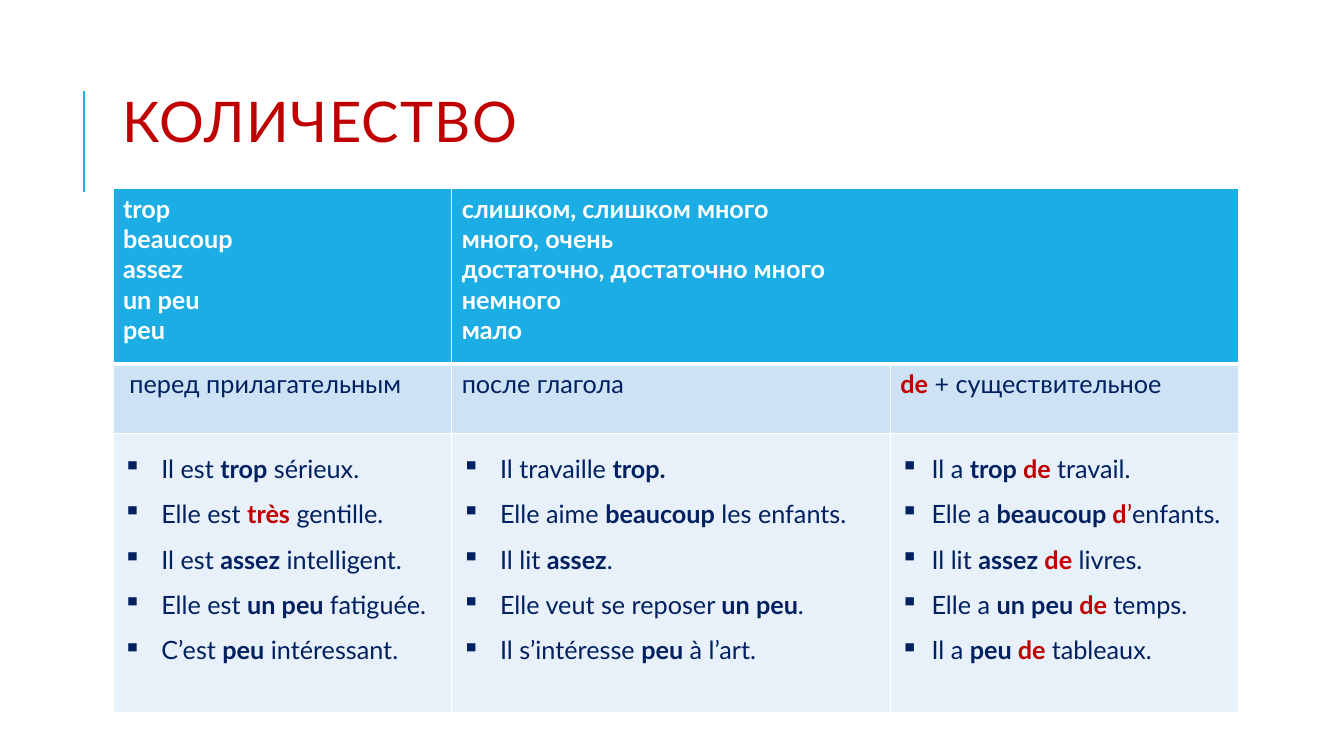
import pptx
import pptx.dml.color
import pptx.enum.shapes
import pptx.enum.text
import pptx.oxml
import pptx.oxml.ns
import pptx.util
from dataclasses import dataclass
from lxml import etree

Inches = pptx.util.Inches
Pt = pptx.util.Pt
qn = pptx.oxml.ns.qn


@dataclass(frozen=True)
class Theme:
    font: str = "Lato"
    title_size: int = 40
    body_size: int = 18
    accent: str = "1CADE4"
    red: str = "C00000"
    navy: str = "002060"
    white: str = "FFFFFF"
    usage_fill: str = "CDE3F5"
    examples_fill: str = "E8F1FA"


THEME = Theme()

# Runs are separated by "|"; a first sign sets the style:
# "*" bold, "!" bold red, "~" red
MARKS = {"*": (True, None), "!": (True, THEME.red), "~": (False, THEME.red)}

ADVERBS = ["trop", "beaucoup", "assez", "un peu", "peu"]
TRANSLATIONS = ["слишком, слишком много", "много, очень",
                "достаточно, достаточно много", "немного", "малo"]
USAGES = [" перед прилагательным", "после глагола", "!de| + существительное"]
EXAMPLES = [
    ["Il est |*trop| sérieux.", "Elle est |!très| gentille.",
     "Il est |*assez| intelligent.", "Elle est |*un peu |fatiguée.",
     "C’est |*peu| intéressant."],
    ["Il travaille |*trop.", "Elle aime |*beaucoup| les enfants.",
     "Il lit |*assez|.", "Elle veut se reposer |*un peu|.",
     "Il s’intéresse |*peu| à l’art."],
    ["Il a |*trop |!de |travail.", "Elle a |*beaucoup |!d|~’|enfants.",
     "Il lit |*assez |!de| livres.", "Elle a |*un peu |!de |temps.",
     "Il a |*peu |!de |tableaux."],
]
COLUMN_WIDTHS = [3.36, 4.35, 3.46]
ROW_HEIGHTS = [1.74, 0.69, 2.77]
EXAMPLE_INDENTS = [0.38, 0.38, 0.31]


def rgb(colour):
    return pptx.dml.color.RGBColor.from_string(colour)


def add_run(paragraph, text, size, colour, bold=False):
    run = paragraph.add_run()
    run.text = text
    run.font.name = THEME.font
    run.font.size = Pt(size)
    run.font.bold = bold
    run.font.color.rgb = rgb(colour)
    return run


def add_bullet(paragraph, indent):
    paragraph.line_spacing = 1.5
    properties = paragraph._p.get_or_add_pPr()
    properties.set("marL", str(Inches(indent)))
    properties.set("indent", str(-Inches(indent)))
    etree.SubElement(properties, qn("a:buChar")).set("char", "▪")


def set_borders(cell, top, bottom):
    properties = cell._tc.get_or_add_tcPr()
    sides = {"a:lnL": 1, "a:lnR": 1, "a:lnT": top, "a:lnB": bottom}
    for place, (tag, width) in enumerate(sides.items()):
        border = etree.Element(qn(tag), w=str(Pt(width)))
        fill = etree.SubElement(border, qn("a:solidFill"))
        etree.SubElement(fill, qn("a:srgbClr")).set("val", THEME.white)
        properties.insert(place, border)


def fill_cell(cell, lines, colour, bold=False, indent=None):
    for number, line in enumerate(lines):
        frame = cell.text_frame
        paragraph = frame.add_paragraph() if number else frame.paragraphs[0]
        if indent:
            add_bullet(paragraph, indent)
        for part in line.split("|"):
            run_bold, run_colour = MARKS.get(part[0], (bold, None))
            text = part[1:] if part[0] in MARKS else part
            add_run(paragraph, text, THEME.body_size, run_colour or colour, run_bold)


def add_title(slide, left, top, width, height):
    # Accent rule to the left of the heading
    rule_x, rule_top = left - 0.29, top + 0.26
    rule = slide.shapes.add_connector(
        pptx.enum.shapes.MSO_CONNECTOR.STRAIGHT,
        Inches(rule_x), Inches(rule_top + 1), Inches(rule_x), Inches(rule_top))
    rule.line.color.rgb = rgb(THEME.accent)
    rule.line.width = Pt(1.5)
    etree.SubElement(rule._element.spPr, qn("a:effectLst"))

    # Heading
    heading = slide.shapes.add_textbox(
        Inches(left), Inches(top), Inches(width), Inches(height)).text_frame
    heading.word_wrap = True
    heading.vertical_anchor = pptx.enum.text.MSO_ANCHOR.MIDDLE
    paragraph = heading.paragraphs[0]
    paragraph.line_spacing = 0.8
    run = add_run(paragraph, "КОЛИЧЕСТВО", THEME.title_size, THEME.red)
    run._r.get_or_add_rPr().set("spc", "100")


def add_quantity_table(slide, left, top):
    table = slide.shapes.add_table(
        len(ROW_HEIGHTS), len(COLUMN_WIDTHS), Inches(left), Inches(top),
        Inches(sum(COLUMN_WIDTHS)), Inches(sum(ROW_HEIGHTS))).table
    for column, width in zip(table.columns, COLUMN_WIDTHS):
        column.width = Inches(width)
    for row, height in zip(table.rows, ROW_HEIGHTS):
        row.height = Inches(height)

    # Fills and borders, with a thick line under the header
    fills = [THEME.accent, THEME.usage_fill, THEME.examples_fill]
    edges = [1, 3, 1, 1]
    for number, (row, fill) in enumerate(zip(table.rows, fills)):
        for cell in row.cells:
            cell.fill.solid()
            cell.fill.fore_color.rgb = rgb(fill)
            set_borders(cell, edges[number], edges[number + 1])

    # Header: adverbs and their translations
    table.cell(0, 1).merge(table.cell(0, 2))
    fill_cell(table.cell(0, 0), ADVERBS, THEME.white, bold=True)
    fill_cell(table.cell(0, 1), TRANSLATIONS, THEME.white, bold=True)

    # Usage and examples, column by column
    for column, usage in enumerate(USAGES):
        fill_cell(table.cell(1, column), [usage], THEME.navy)
        fill_cell(table.cell(2, column), EXAMPLES[column], THEME.navy,
                  indent=EXAMPLE_INDENTS[column])


def main():
    deck = pptx.Presentation()
    deck.slide_width = Inches(13.33)
    deck.slide_height = Inches(7.5)
    slide = deck.slides.add_slide(deck.slide_layouts[6])
    add_title(slide, 1.12, 0.64, 10.63, 1.23)
    add_quantity_table(slide, 1.12, 1.87)
    deck.save("out.pptx")


if __name__ == "__main__":
    main()
